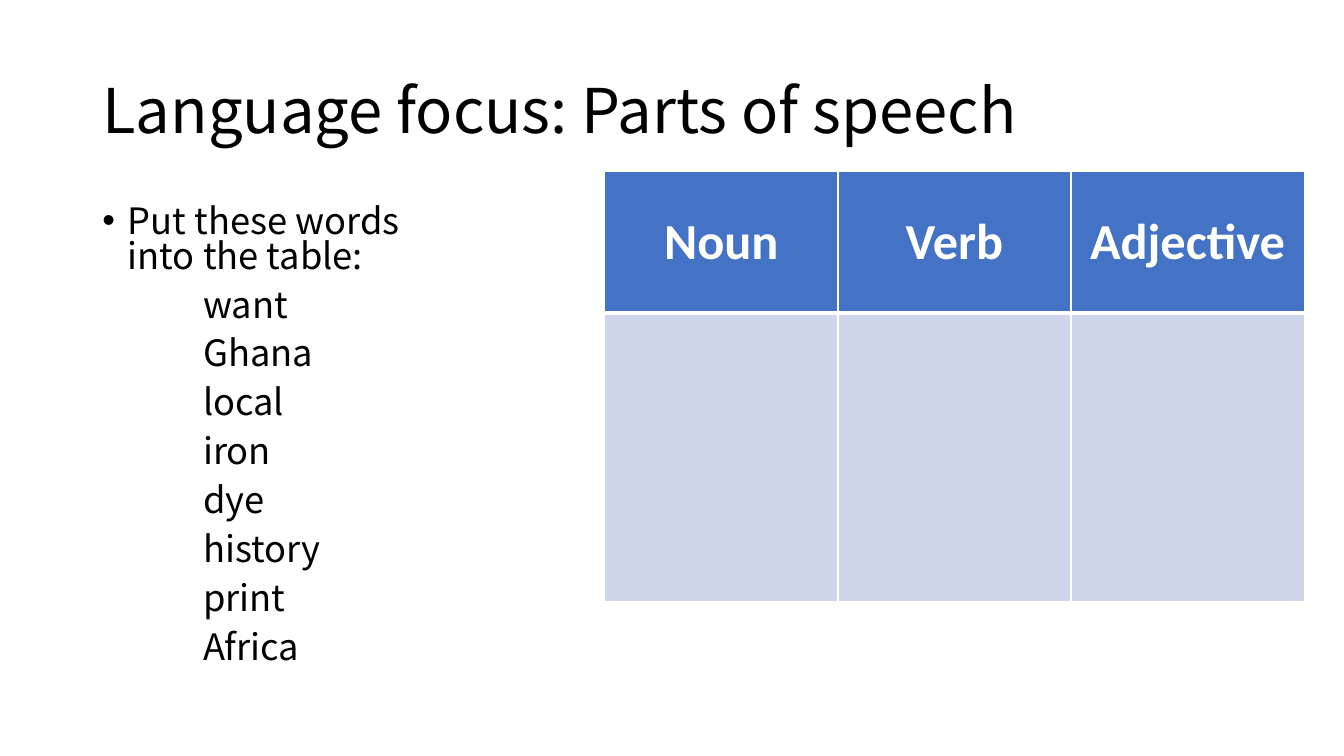
from dataclasses import dataclass

from lxml import etree
from pptx import Presentation
from pptx.dml.color import RGBColor
from pptx.enum.text import MSO_ANCHOR, PP_ALIGN
from pptx.oxml.ns import qn
from pptx.util import Cm, Pt

MIDDLE = MSO_ANCHOR.MIDDLE
CENTER = PP_ALIGN.CENTER


@dataclass(frozen=True)
class Theme:
    """Colours, fonts and type sizes of the slide."""
    ink: str = "000000"
    paper: str = "FFFFFF"
    header: str = "4472C4"
    body: str = "CFD5EA"
    text_font: str = "Noto Sans CJK SC"
    table_font: str = "Calibri"
    title_size: float = 44
    list_size: float = 25.9
    header_size: float = 36


THEME = Theme()
TITLE = "Language focus: Parts of speech"
PROMPT = "Put these words into the table:"
WORDS = ["want", "Ghana", "local", "iron", "dye", "history", "print", "Africa"]
HEADINGS = ["Noun", "Verb", "Adjective"]


def style(para, font, size, color, bold=False):
    """Set the font of a paragraph."""
    para.font.name = font
    para.font.size = Pt(size)
    para.font.bold = bold
    para.font.color.rgb = RGBColor.from_string(color)
    properties = para._p.get_or_add_pPr().find(qn("a:defRPr"))
    etree.SubElement(properties, qn("a:ea"), typeface=font)


def add_text_frame(page, box):
    """Add a wrapping text box and return its frame."""
    frame = page.shapes.add_textbox(*box).text_frame
    frame.word_wrap = True
    return frame


def add_title(page, box):
    """Add the slide title, centred vertically in its box."""
    frame = add_text_frame(page, box)
    frame.vertical_anchor = MIDDLE
    para = frame.paragraphs[0]
    para.text = TITLE
    para.line_spacing = 0.9
    style(para, THEME.text_font, THEME.title_size, THEME.ink)


def add_word_list(page, box):
    """Add the bulleted prompt and the indented words below it."""
    frame = add_text_frame(page, box)
    for index, text in enumerate([PROMPT, *WORDS]):
        para = frame.add_paragraph() if index else frame.paragraphs[0]
        para.text = text
        para.line_spacing = 0.8
        properties = para._p.get_or_add_pPr()
        if index:
            para.space_before = Pt(10)
            properties.set("marL", str(Cm(2.54)))
        else:
            properties.set("marL", str(Cm(0.64)))
            properties.set("indent", str(Cm(-0.64)))
            etree.SubElement(properties, qn("a:buFont"), typeface="Arial")
            etree.SubElement(properties, qn("a:buChar"), char="•")
        style(para, THEME.text_font, THEME.list_size, THEME.ink)


def set_borders(cell, top, bottom):
    """Draw the cell borders, with the given top and bottom widths in points."""
    properties = cell._tc.get_or_add_tcPr()
    widths = {"a:lnL": 1, "a:lnR": 1, "a:lnT": top, "a:lnB": bottom}
    for position, (side, width) in enumerate(widths.items()):
        line = etree.Element(qn(side), w=str(Pt(width)))
        fill = etree.SubElement(line, qn("a:solidFill"))
        etree.SubElement(fill, qn("a:srgbClr"), val=THEME.paper)
        properties.insert(position, line)


def add_speech_table(page, box):
    """Add the table with one heading and one empty cell per part of speech."""
    height = box[3]
    table = page.shapes.add_table(2, len(HEADINGS), *box).table
    header_height = Cm(3.57)
    table.rows[0].height = header_height
    table.rows[1].height = height - header_height
    for column, heading in enumerate(HEADINGS):
        header, blank = table.cell(0, column), table.cell(1, column)
        header.text = heading
        header.vertical_anchor = MIDDLE
        para = header.text_frame.paragraphs[0]
        para.alignment = CENTER
        style(para, THEME.table_font, THEME.header_size, THEME.paper, bold=True)
        for cell, color in ((header, THEME.header), (blank, THEME.body)):
            cell.fill.solid()
            cell.fill.fore_color.rgb = RGBColor.from_string(color)
        set_borders(header, 1, 3)
        set_borders(blank, 3, 1)


def main():
    """Build the slide and save the deck."""
    deck = Presentation()
    deck.slide_width, deck.slide_height = Cm(33.87), Cm(19.05)
    page = deck.slides.add_slide(deck.slide_layouts[6])
    add_word_list(page, (Cm(2.33), Cm(5.08), Cm(9.78), Cm(12.09)))
    add_title(page, (Cm(2.33), Cm(1.01), Cm(29.21), Cm(3.68)))
    add_speech_table(page, (Cm(15.24), Cm(4.32), Cm(17.63), Cm(10.85)))
    deck.save("out.pptx")


if __name__ == "__main__":
    main()
